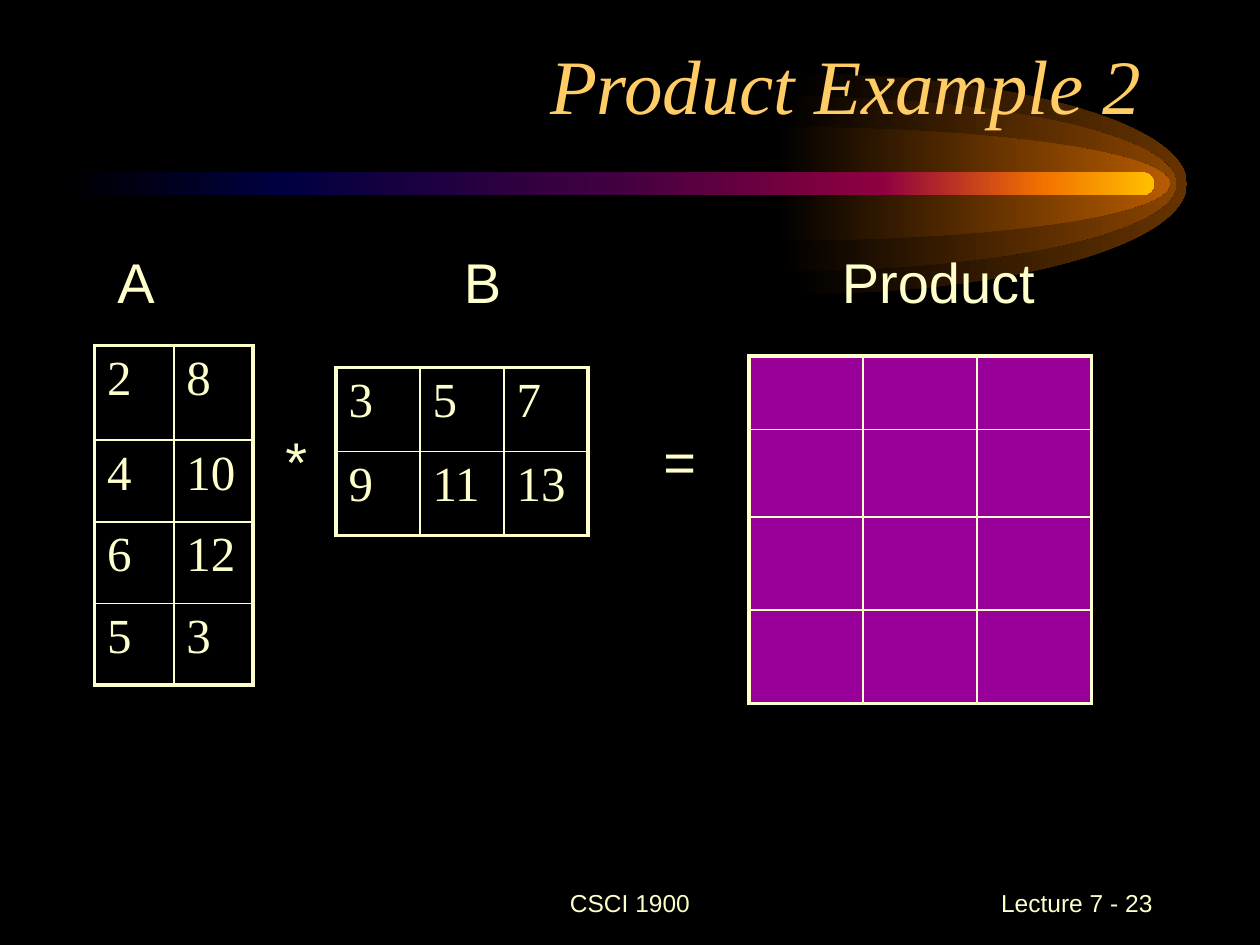
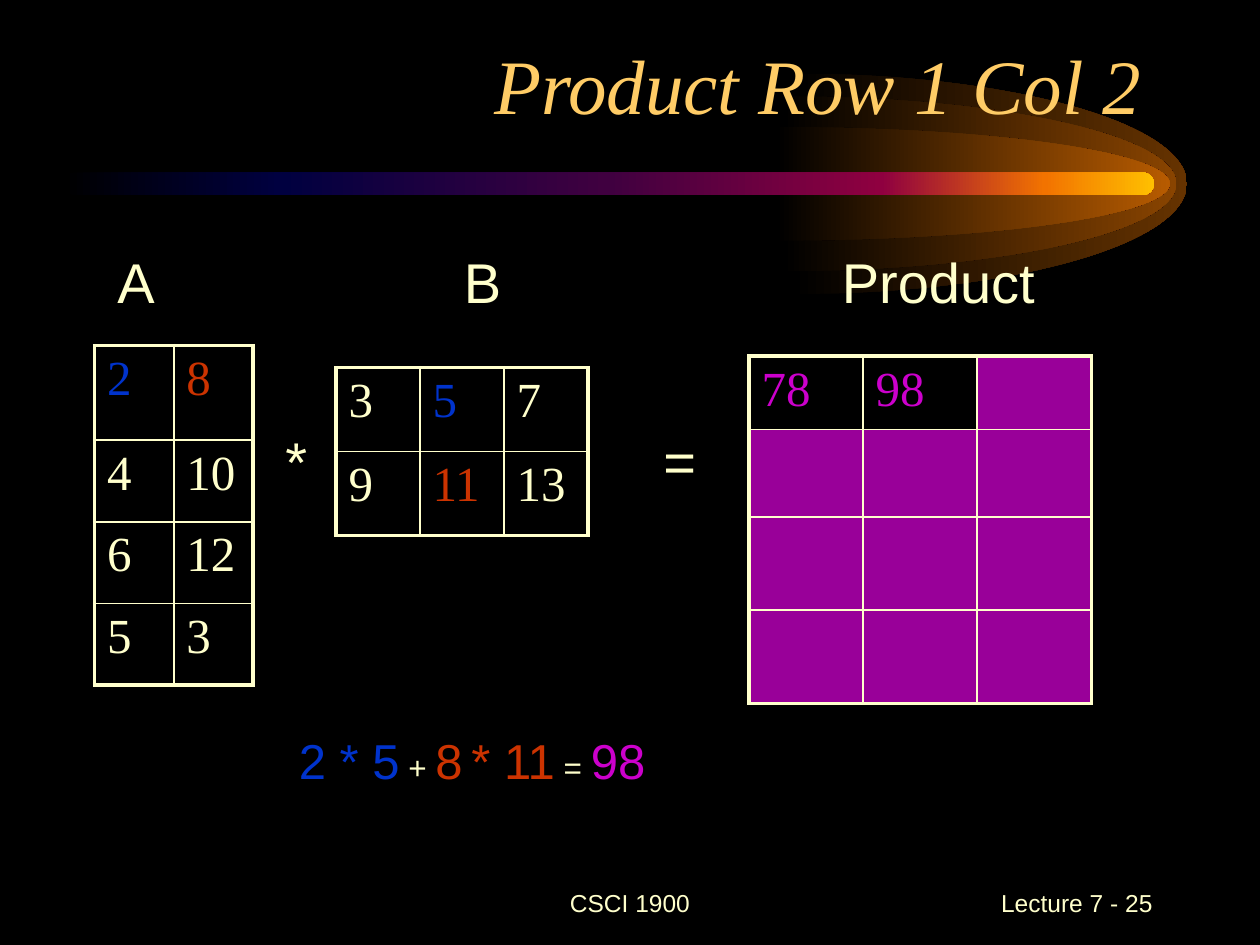
from lxml import etree
from pptx import Presentation
from pptx.dml.color import RGBColor
from pptx.enum.shapes import MSO_SHAPE as SHAPE
from pptx.enum.text import MSO_ANCHOR as ANCHOR, PP_ALIGN as ALIGN
from pptx.oxml.ns import qn
from pptx.util import Pt

COLORS = {
    "background": "000000",
    "text": "FFFFCC",
    "title": "FFCC66",
    "first term": "0033CC",
    "second term": "CC3300",
    "result": "CC00CC",
    "unknown": "990099",
}
SANS, SERIF = "Arial", "Times New Roman"

# Glow layers from back to front: centre x, vertical radius, outer colour
GLOW_LAYERS = [(453, 63, "663300"), (447, 50, "894400"), (443.25, 32.5, "B75B00")]
GLOW_CENTER_Y, GLOW_LENGTH = 105, 225.25
ARC = 0.55  # Bezier handle length that rounds a quarter ellipse
BAR_STOPS = [(0, "000000"), (20, "000040"), (50, "400040"),
             (75, "8F0040"), (90, "F27300"), (100, "FFBF00")]

# Text, left, top, width, wrapped
LABELS = [("*", 156, 240, 27, False), ("=", 372, 240, 55, True),
          ("A", 60, 138, 36, False), ("B", 258, 138, 36, False),
          ("Product", 474, 138, 125, False)]

# Left, top, column width, row heights
GRIDS = {
    "A": (54, 197.5, 45.35, [54, 46.7, 46.6, 46.6]),
    "B": (192, 210, 48, [48, 48]),
    "Product": (428, 203.5, 65.2, [42, 49.9, 53.3, 53.3]),
}
FACTORS = {
    "A": [[2, 8], [4, 10], [6, 12], [5, 3]],
    "B": [[3, 5, 7], [9, 11, 13]],
}
UNKNOWN_ROW = [None] * 3

# Highlights map (matrix, row, column) to a colour key
SLIDES = [
    {"title": "Product Example 2", "number": 23,
     "product": [UNKNOWN_ROW] * 4, "highlights": {}, "equation": []},
    {"title": "Product Row 1 Col 2", "number": 25,
     "product": [[78, 98, None]] + [UNKNOWN_ROW] * 3,
     "highlights": {("A", 0, 0): "first term", ("A", 0, 1): "second term",
                    ("B", 0, 1): "first term", ("B", 1, 1): "second term",
                    ("Product", 0, 0): "result", ("Product", 0, 1): "result"},
     "equation": [(" 2 * 5", 28, "first term"), (" + ", 18, "text"),
                  ("8", 28, "second term"), (" ", 18, "text"),
                  ("* 11", 28, "second term"), (" = ", 18, "text"),
                  ("98", 28, "result")]},
]


def add_text(slide, box, runs, font=SANS, align=ALIGN.LEFT, anchor=ANCHOR.TOP,
             italic=False, wrap=True):
    """Add one paragraph of (text, size, colour key) runs."""
    frame = slide.shapes.add_textbox(*map(Pt, box)).text_frame
    frame.word_wrap = wrap
    frame.vertical_anchor = anchor
    paragraph = frame.paragraphs[0]
    paragraph.alignment = align
    paragraph.font.name = font
    paragraph.font.italic = italic
    for text, size, color in runs:
        run = paragraph.add_run()
        run.text = text
        run.font.size = Pt(size)
        run.font.color.rgb = RGBColor.from_string(COLORS[color])


def paint_gradient(shape, stops):
    """Fill from left to right with (percent, colour) stops, without outline."""
    shape.shadow.inherit = False
    shape.line.fill.background()
    shape.fill.gradient()
    shape.fill.gradient_angle = 0
    stop_list = shape._element.spPr.find(".//" + qn("a:gsLst"))
    for old_stop in list(stop_list):
        stop_list.remove(old_stop)
    for percent, color in stops:
        stop = etree.SubElement(stop_list, qn("a:gs"), pos=str(percent * 1000))
        etree.SubElement(stop, qn("a:srgbClr"), val=color)


prs = Presentation()
prs.slide_width, prs.slide_height = Pt(720), Pt(540)
background = prs.slide_master.background.fill
background.solid()
background.fore_color.rgb = RGBColor.from_string(COLORS["background"])

for content in SLIDES:
    slide = prs.slides.add_slide(prs.slide_layouts[6])

    # Comet: three half ellipses behind a bar
    for center_x, radius, color in GLOW_LAYERS:
        # Offsets from the centre in radii: two quarter curves, then the centre
        offsets = [(0, -1), (ARC, -1), (1, -ARC), (1, 0),
                   (1, ARC), (ARC, 1), (0, 1), (0, 0)]
        outline = [(Pt(center_x + GLOW_LENGTH * x), Pt(GLOW_CENTER_Y + radius * y))
                   for x, y in offsets]
        builder = slide.shapes.build_freeform(*outline[0])
        builder.add_line_segments(outline[1:], close=True)
        glow = builder.convert_to_shape()
        segments = list(glow._element.spPr.iter(qn("a:lnTo")))
        for first in (0, 3):
            curve = etree.Element(qn("a:cubicBezTo"))
            segments[first].addprevious(curve)
            for segment in segments[first:first + 3]:
                curve.append(segment[0])
                segment.getparent().remove(segment)
        paint_gradient(glow, [(0, COLORS["background"]), (100, color)])
    bar = slide.shapes.add_shape(SHAPE.ROUNDED_RECTANGLE,
                                 Pt(36), Pt(98.5), Pt(623.5), Pt(13))
    bar.adjustments[0] = 0.5
    paint_gradient(bar, BAR_STOPS)

    # Footer and title
    add_text(slide, (246, 498, 228, 36), [("CSCI 1900", 14, "text")],
             align=ALIGN.CENTER, anchor=ANCHOR.MIDDLE)
    add_text(slide, (516, 498, 149.75, 36),
             [(f"Lecture 7 - {content['number']}", 14, "text")],
             align=ALIGN.RIGHT, anchor=ANCHOR.MIDDLE)
    add_text(slide, (48, 18, 611.75, 60), [(content["title"], 44, "title")],
             font=SERIF, align=ALIGN.RIGHT, anchor=ANCHOR.BOTTOM, italic=True)

    # Matrices
    matrices = FACTORS | {"Product": content["product"]}
    for matrix, values in matrices.items():
        left, top, column_width, row_heights = GRIDS[matrix]
        row_count, column_count = len(values), len(values[0])
        grid = slide.shapes.add_table(
            row_count, column_count, Pt(left), Pt(top),
            Pt(column_width * column_count), Pt(sum(row_heights))).table
        grid.first_row = grid.horz_banding = False
        for column in grid.columns:
            column.width = Pt(column_width)
        for r, row_values in enumerate(values):
            grid.rows[r].height = Pt(row_heights[r])
            for c, value in enumerate(row_values):
                cell = grid.cell(r, c)
                if value is None:
                    cell.fill.solid()
                    cell.fill.fore_color.rgb = RGBColor.from_string(COLORS["unknown"])
                else:
                    cell.fill.background()
                    cell.text = str(value)
                    font = cell.text_frame.paragraphs[0].font
                    font.name, font.size = SERIF, Pt(28)
                    color = content["highlights"].get((matrix, r, c), "text")
                    font.color.rgb = RGBColor.from_string(COLORS[color])

                # Thick outer border, thin inner rules
                outer_sides = {"lnL": c == 0, "lnR": c == column_count - 1,
                               "lnT": r == 0, "lnB": r == row_count - 1}
                properties = cell._tc.get_or_add_tcPr()
                for position, (side, is_outer) in enumerate(outer_sides.items()):
                    border = etree.Element(qn(f"a:{side}"),
                                           w=str(Pt(2.25 if is_outer else 1)))
                    paint = etree.SubElement(border, qn("a:solidFill"))
                    etree.SubElement(paint, qn("a:srgbClr"), val=COLORS["text"])
                    properties.insert(position, border)

    # Matrix names, operators and the worked sum
    for label, left, top, width, wrapped in LABELS:
        add_text(slide, (left, top, width, 45), [(label, 32, "text")], wrap=wrapped)
    if content["equation"]:
        add_text(slide, (156, 414, 282, 41), content["equation"])

prs.save("out.pptx")
